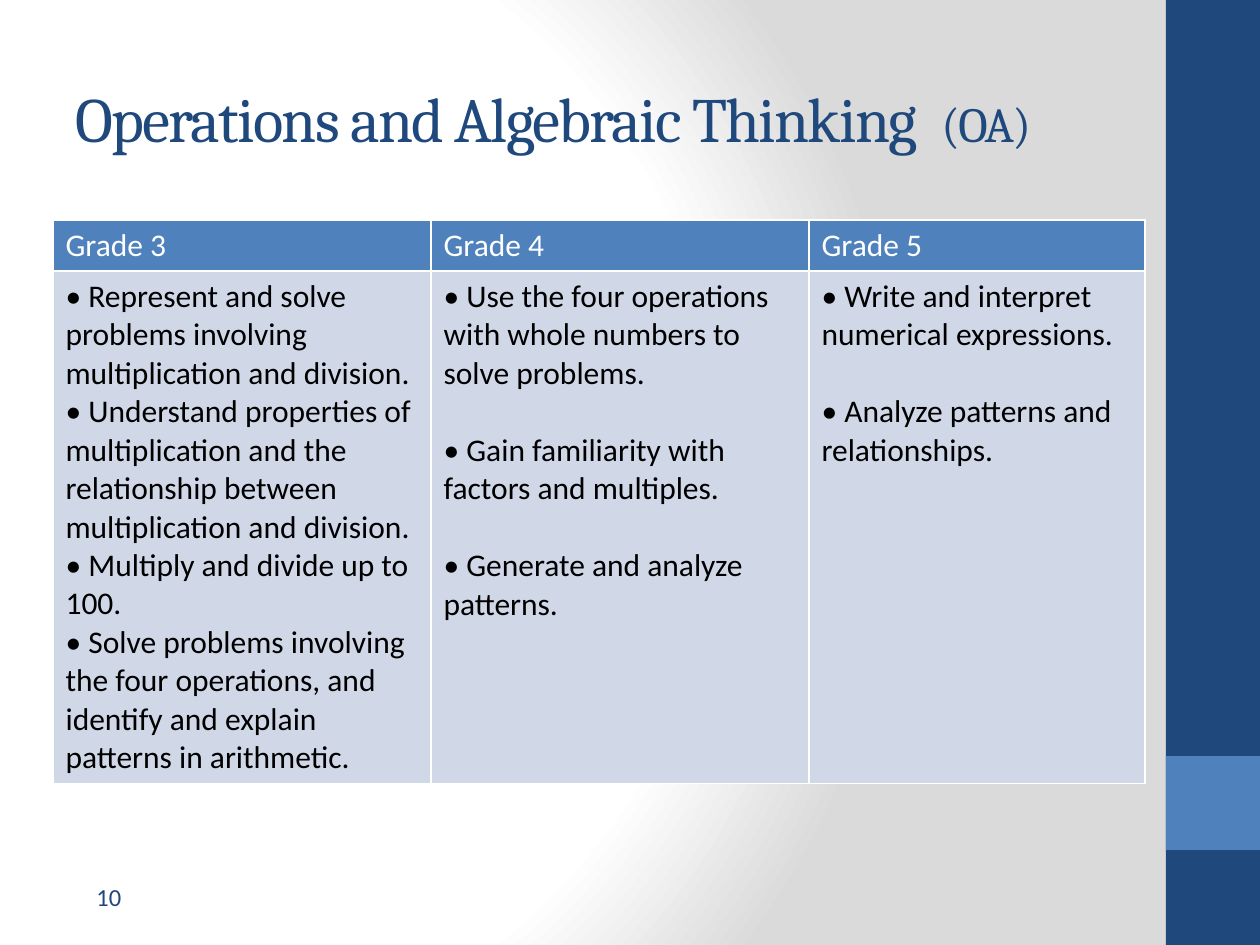
from dataclasses import dataclass

from lxml import etree
from pptx import Presentation
from pptx import util as u
from pptx.dml.color import RGBColor
from pptx.enum import shapes, text
from pptx.oxml import ns, parse_xml

EMU_PER_PX = 914400 / 126
COLORS = {
    "navy": "1F497D",
    "blue": "4F81BD",
    "pale": "D0D8E8",
    "white": "FFFFFF",
    "gray": "DADADA",
    "black": "000000",
}


@dataclass
class Box:
    left: int
    top: int
    width: int
    height: int

    def emu(self) -> list[u.Emu]:
        return [px(n) for n in (self.left, self.top, self.width, self.height)]


@dataclass
class Grade:
    heading: str
    width: int
    goals: list[str]
    gap: int = 0  # points between goals


GRADES = [
    Grade("Grade 3", 378, [
        "Represent and solve problems involving multiplication and division.",
        "Understand properties of multiplication and the relationship between "
        "multiplication and division.",
        "Multiply and divide up to 100.",
        "Solve problems involving the four operations, and identify and explain "
        "patterns in arithmetic.",
    ]),
    Grade("Grade 4", 378, [
        "Use the four operations with whole numbers to solve problems.",
        "Gain familiarity with factors and multiples.",
        "Generate and analyze patterns.",
    ], gap=22),
    Grade("Grade 5", 336, [
        "Write and interpret numerical expressions.",
        "Analyze patterns and relationships.",
    ], gap=22),
]
ROW_HEIGHTS = [51, 512]
SIDEBAR = [(Box(1166, 0, 94, 945), "navy"), (Box(1166, 756, 94, 94), "blue")]


def px(n: int) -> u.Emu:
    return u.Emu(round(n * EMU_PER_PX))


def rgb(name: str) -> RGBColor:
    return RGBColor.from_string(COLORS[name])


def set_font(font, name: str, size: int, color: str) -> None:
    font.name, font.size, font.bold = name, u.Pt(size), False
    font.color.rgb = rgb(color)


def paint_background(slide) -> None:
    """Fill with a radial gradient, which has no public setter."""
    slide.background.fill.solid()
    properties = slide.element.find(".//" + ns.qn("p:bgPr"))
    stops = "".join(
        f'<a:gs pos="{pos}000"><a:srgbClr val="{COLORS[name]}"/></a:gs>'
        for pos, name in ((0, "white"), (75, "white"), (100, "gray")))
    gradient = parse_xml(
        f'<a:gradFill {ns.nsdecls("a")} rotWithShape="1"><a:gsLst>{stops}</a:gsLst>'
        '<a:path path="circle"><a:fillToRect l="20000" t="50000" r="100000" b="50000"/>'
        '</a:path></a:gradFill>')
    properties.replace(properties[0], gradient)


def add_bar(slide, box: Box, color: str) -> None:
    bar = slide.shapes.add_shape(shapes.MSO_SHAPE.RECTANGLE, *box.emu())
    bar.shadow.inherit = False
    bar.fill.solid()
    bar.fill.fore_color.rgb = rgb(color)
    bar.line.fill.background()


def fill_title(title) -> None:
    title.left, title.top, title.width, title.height = Box(63, 38, 1050, 158).emu()
    frame = title.text_frame
    frame.vertical_anchor = text.MSO_ANCHOR.MIDDLE
    frame.auto_size = text.MSO_AUTO_SIZE.NONE
    heading = frame.paragraphs[0]
    heading.alignment = text.PP_ALIGN.LEFT
    set_font(heading.font, "Cambria", 36, "navy")
    for words, size in (("Operations and Algebraic Thinking  ", 36), ("(OA)", 28)):
        run = heading.add_run()
        run.text = words
        run.font.size = u.Pt(size)
        run.font._element.set("spc", "-100")


def style_cell(cell, fill: str) -> None:
    properties = cell._tc.get_or_add_tcPr()
    for side in "LRTB":
        line = etree.SubElement(properties, ns.qn(f"a:ln{side}"), w=str(u.Pt(1)))
        solid = etree.SubElement(line, ns.qn("a:solidFill"))
        etree.SubElement(solid, ns.qn("a:srgbClr"), val=COLORS["white"])
    cell.fill.solid()
    cell.fill.fore_color.rgb = rgb(fill)


def write_cell(cell, lines: list[str], color: str, fill: str, gap: int = 0) -> None:
    style_cell(cell, fill)
    cell.text = "\n".join(lines)
    for i, paragraph in enumerate(cell.text_frame.paragraphs):
        set_font(paragraph.font, "Calibri", 18, color)
        if i and gap:
            paragraph.space_before = u.Pt(gap)


def add_grades_table(slide) -> None:
    box = Box(53, 220, sum(g.width for g in GRADES), sum(ROW_HEIGHTS))
    table = slide.shapes.add_table(2, len(GRADES), *box.emu()).table
    table.horz_banding = False
    for row, height in zip(table.rows, ROW_HEIGHTS):
        row.height = px(height)
    for i, grade in enumerate(GRADES):
        table.columns[i].width = px(grade.width)
        write_cell(table.cell(0, i), [grade.heading], "white", "blue")
        goals = [f"• {goal}" for goal in grade.goals]
        write_cell(table.cell(1, i), goals, "black", "pale", grade.gap)


def add_page_number(slide, number: int) -> None:
    frame = slide.shapes.add_textbox(*Box(84, 876, 273, 50).emu()).text_frame
    frame.word_wrap = True
    frame.text = str(number)
    set_font(frame.paragraphs[0].font, "Calibri", 14, "navy")


def main() -> None:
    deck = Presentation()
    deck.slide_width, deck.slide_height = px(1260), px(945)
    slide = deck.slides.add_slide(deck.slide_layouts[5])
    paint_background(slide)
    for box, color in SIDEBAR:
        add_bar(slide, box, color)
    fill_title(slide.shapes.title)
    add_grades_table(slide)
    add_page_number(slide, 10)
    deck.save("out.pptx")


if __name__ == "__main__":
    main()
